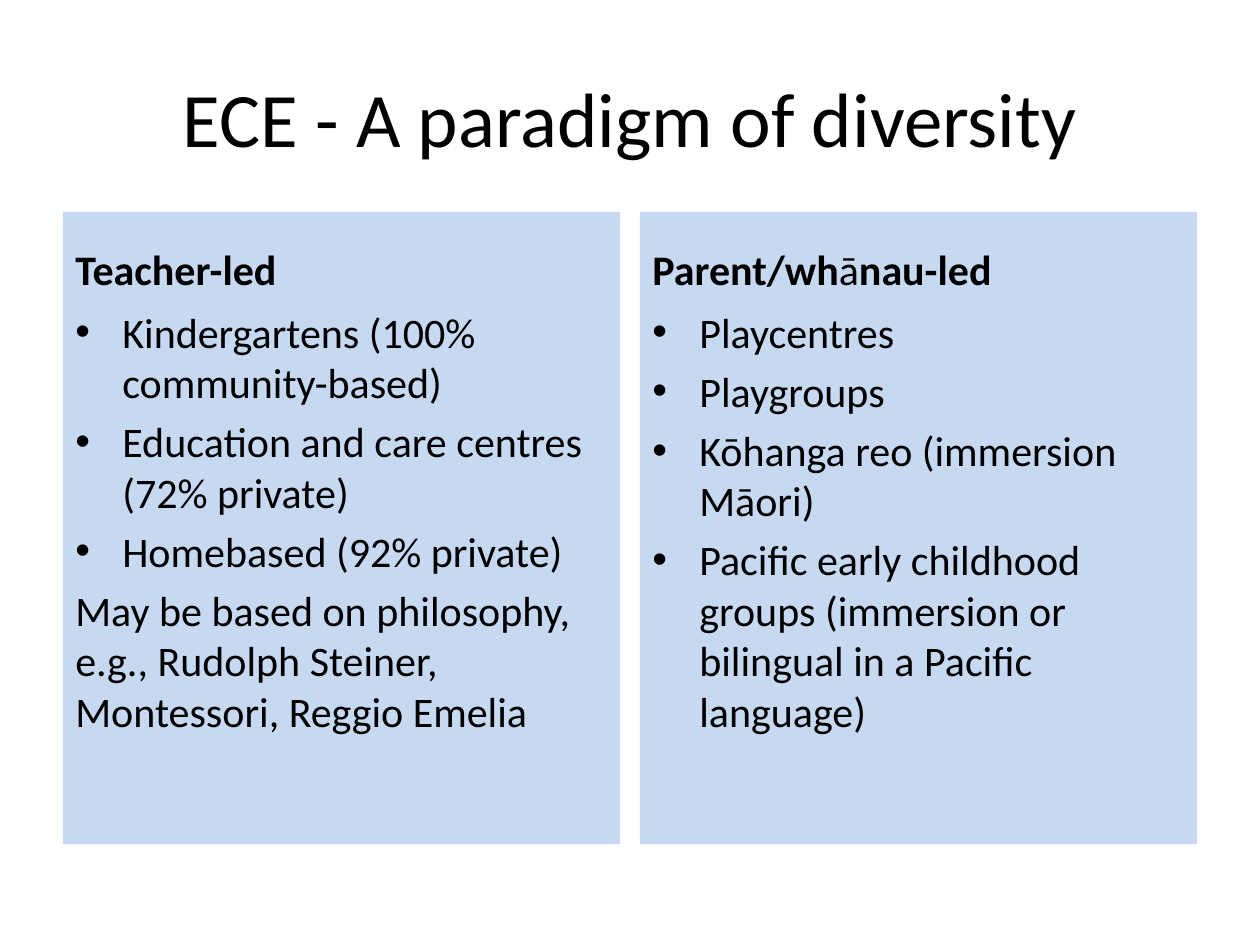
from pptx import Presentation
from pptx.dml.color import RGBColor
from pptx.enum.shapes import MSO_SHAPE as Shape
from pptx.enum.text import MSO_ANCHOR as Anchor, PP_ALIGN as Align
from pptx.oxml.ns import qn
from pptx.util import Emu, Pt
from lxml.etree import SubElement

SCALE = 914400 / 126
BLACK, BLUE = "000000", "C6D9F1"
LEFT, TOP, WIDTH, GAP = 63, 212, 557, 20
HEAD, BODY = 88, 544
INDENT = 47

# Each column: heading runs as (text, bold), bulleted items, closing text
COLUMNS = [
    ([("Teacher-led", True)],
     ["Kindergartens (100% community-based)",
      "Education and care centres (72% private)",
      "Homebased (92% private)"],
     ["May be based on philosophy, e.g., Rudolph Steiner, "
      "Montessori, Reggio Emelia"]),
    ([("Parent/wh", True), ("ā", False), ("nau-led", True)],
     ["Playcentres", "Playgroups", "Kōhanga reo (immersion Māori)",
      "Pacific early childhood groups (immersion or bilingual "
      "in a Pacific language)"],
     []),
]


def px(n):
    return Emu(round(n * SCALE))


def color(code):
    return RGBColor.from_string(code)


def style(font, size, bold=False):
    font.name, font.size, font.bold = "Calibri", Pt(size), bold
    font.color.rgb = color(BLACK)


def place(shape, x, y, w, h):
    shape.left, shape.top, shape.width, shape.height = map(px, (x, y, w, h))


def panel(slide, x, y, w, h, anchor):
    box = slide.shapes.add_shape(Shape.RECTANGLE, *map(px, (x, y, w, h)))
    box.shadow.inherit = False
    box.fill.solid()
    box.fill.fore_color.rgb = color(BLUE)
    box.line.fill.background()
    frame = box.text_frame
    frame.word_wrap = True
    frame.vertical_anchor = anchor
    return frame


def bullet(para):
    props = para._p.get_or_add_pPr()
    props.set("marL", str(px(INDENT)))
    props.set("indent", str(-px(INDENT)))
    SubElement(props, qn("a:buFont")).set("typeface", "Arial")
    SubElement(props, qn("a:buChar")).set("char", "•")


def title(slide, x, y, w, h):
    shape = slide.shapes.title
    place(shape, x, y, w, h)
    frame = shape.text_frame
    frame.text = "ECE - A paradigm of diversity"
    frame.vertical_anchor = Anchor.MIDDLE
    para = frame.paragraphs[0]
    para.alignment = Align.CENTER
    style(para.runs[0].font, 44)


def column(slide, x, y, w, heading, items, closing):
    # Heading
    para = panel(slide, x, y, w, HEAD, Anchor.BOTTOM).paragraphs[0]
    para.alignment = Align.LEFT
    for text, bold in heading:
        run = para.add_run()
        run.text = text
        style(run.font, 24, bold)

    # List and closing text
    frame = panel(slide, x, y + HEAD, w, BODY, Anchor.TOP)
    frame.text = "\n".join(items + closing)
    for i, para in enumerate(frame.paragraphs):
        para.alignment = Align.LEFT
        if i:
            para.space_before = Pt(5)
        if i < len(items):
            bullet(para)
        style(para.runs[0].font, 24)


def main():
    deck = Presentation()
    deck.slide_width, deck.slide_height = px(1260), px(945)
    slide = deck.slides.add_slide(deck.slide_layouts[5])
    title(slide, LEFT, 38, 2 * WIDTH + GAP, 157)
    for i, parts in enumerate(COLUMNS):
        column(slide, LEFT + i * (WIDTH + GAP), TOP, WIDTH, *parts)
    deck.save("out.pptx")


if __name__ == "__main__":
    main()
